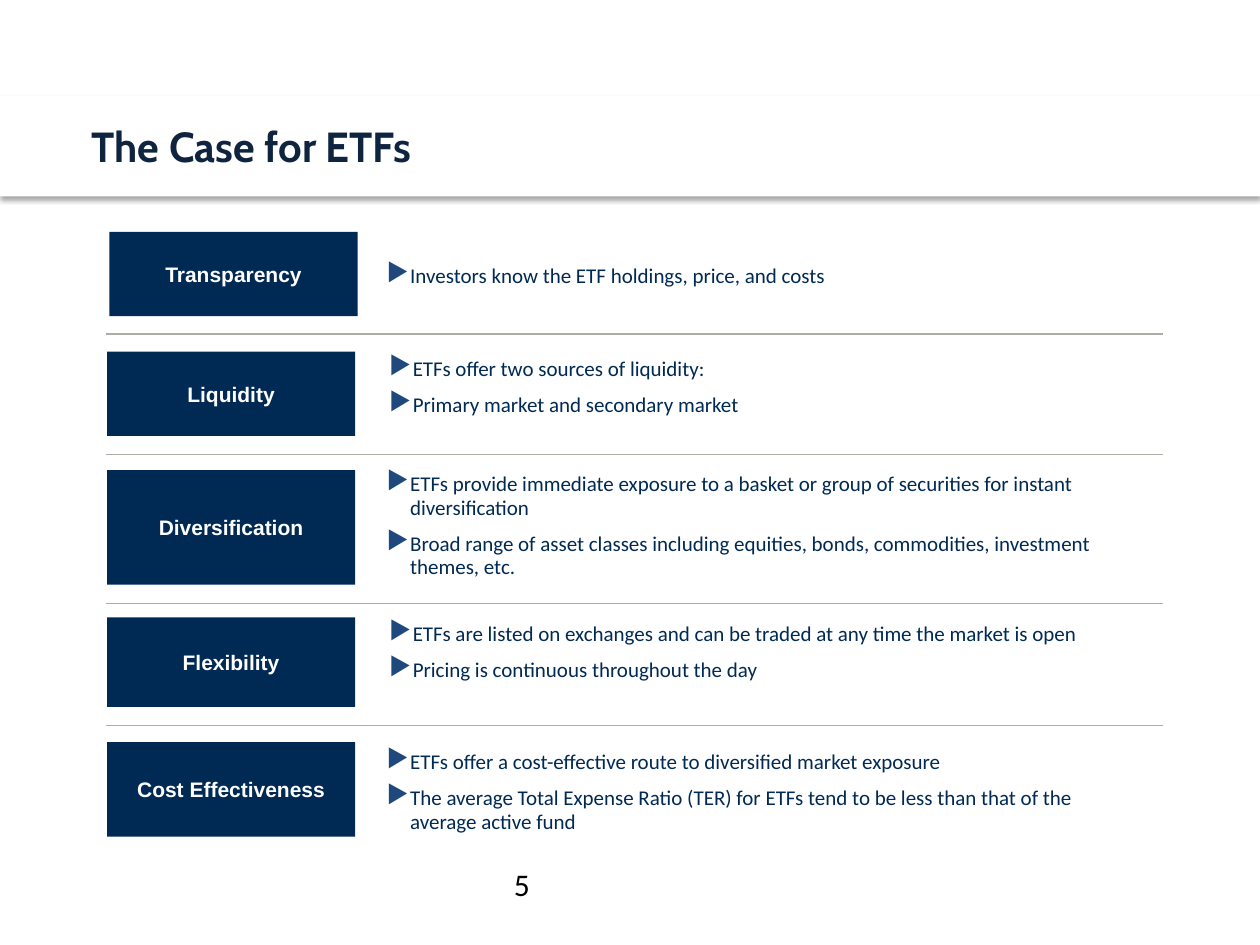
from lxml.etree import SubElement
from pptx import Presentation
from pptx.dml.color import RGBColor
from pptx.enum.shapes import MSO_CONNECTOR, MSO_SHAPE
from pptx.enum.text import MSO_ANCHOR, PP_ALIGN
from pptx.oxml.ns import qn
from pptx.util import Pt

NAVY = "002A54"
ROWS = [
    ("Transparency", 62.6, 132.5, 48.2, 213.8, 147.6, 49.7, 190.8,
     ["Investors know the ETF holdings, price, and costs"]),
    ("Liquidity", 61.2, 200.9, 48.2, 215.3, 200.9, 52.6, 259.9,
     ["ETFs offer two sources of liquidity:",
      "Primary market and secondary market"]),
    ("Diversification", 61.2, 268.6, 65.5, 213.8, 266.4, 99.4, 344.9,
     ["ETFs provide immediate exposure to a basket or group of securities for instant diversification",
      "Broad range of asset classes including equities, bonds, commodities, investment themes, etc."]),
    ("Flexibility", 61.2, 352.8, 51.1, 215.3, 352.1, 52.6, 414.7,
     ["ETFs are listed on exchanges and can be traded at any time the market is open",
      "Pricing is continuous throughout the day"]),
    ("Cost Effectiveness", 61.2, 424.1, 54, 213.8, 425.5, 52.6, None,
     ["ETFs offer a cost-effective route to diversified market exposure",
      "The average Total Expense Ratio (TER) for ETFs tend to be less than that of the average active fund"]),
]


def color(value):
    return RGBColor.from_string(value)


def add_element(parent, tag, **attributes):
    return SubElement(parent, qn(tag), attributes)


class PageBuilder:
    """Draws styled elements on the current slide, with lengths in points."""

    def __init__(self, page):
        self.page = page

    def add_span(self, para, text, font, size, ink, bold=False):
        span = para.add_run()
        span.text = text
        span.font.name = font
        span.font.size = Pt(size)
        span.font.bold = bold
        span.font.color.rgb = color(ink)

    def rectangle(self, left, top, width, height, fill):
        box = self.page.shapes.add_shape(
            MSO_SHAPE.RECTANGLE, Pt(left), Pt(top), Pt(width), Pt(height))
        box.shadow.inherit = False
        box.fill.solid()
        box.fill.fore_color.rgb = color(fill)
        box.line.fill.background()
        return box

    def header_band(self, top, width, height):
        band = self.rectangle(0, top, width, height, "FFFFFF")
        effects = band.element.spPr.find(qn("a:effectLst"))
        shadow = add_element(effects, "a:outerShdw", blurRad=str(Pt(3.1)),
                             dist=str(Pt(1.8)), dir="5400000", algn="t", rotWithShape="0")
        shade = add_element(shadow, "a:srgbClr", val="000000")
        add_element(shade, "a:alpha", val="35000")

    def text_frame(self, left, top, width, height, anchor=MSO_ANCHOR.TOP):
        box = self.page.shapes.add_textbox(Pt(left), Pt(top), Pt(width), Pt(height))
        frame = box.text_frame
        frame.word_wrap = True
        frame.vertical_anchor = anchor
        return frame

    def label(self, text, left, top, height):
        frame = self.rectangle(left, top, 141.8, height, NAVY).text_frame
        frame.word_wrap = True
        frame.vertical_anchor = MSO_ANCHOR.MIDDLE
        para = frame.paragraphs[0]
        para.alignment = PP_ALIGN.CENTER
        self.add_span(para, text, "Arial", 12, "FFFFFF", True)

    def bullets(self, items, left, top, height):
        frame = self.text_frame(left, top, 445.7, height)
        for index, item in enumerate(items):
            para = frame.add_paragraph() if index else frame.paragraphs[0]
            properties = para._p.get_or_add_pPr()
            properties.set("marL", str(Pt(13.5)))
            properties.set("indent", str(-Pt(13.5)))
            tint = add_element(properties, "a:buClr")
            add_element(tint, "a:srgbClr", val="1F497D")
            add_element(properties, "a:buSzPct", val="120000")
            add_element(properties, "a:buChar", char="▶")
            para.line_spacing = 0.94
            para.space_before = Pt(7 if index else 0)
            self.add_span(para, item, "Calibri", 12, NAVY)

    def divider(self, top):
        line = self.page.shapes.add_connector(
            MSO_CONNECTOR.STRAIGHT, Pt(664.6), Pt(top), Pt(60.5), Pt(top))
        line.line.color.rgb = color("ABAEA5")
        line.line.width = Pt(0.75)
        add_element(line._element.spPr, "a:effectLst")


def main():
    deck = Presentation()
    deck.slide_width, deck.slide_height = Pt(720), Pt(540)
    builder = PageBuilder(deck.slides.add_slide(deck.slide_layouts[6]))

    builder.header_band(54.7, 720, 57.6)
    title = builder.text_frame(45.4, 54.7, 629.3, 56.9, MSO_ANCHOR.MIDDLE)
    builder.add_span(title.paragraphs[0], "The Case for ETFs", "Cabin", 24, "0F243E", True)
    number = builder.text_frame(286.6, 491, 149.8, 36)
    builder.add_span(number.paragraphs[0], "5", "Calibri", 18, "000000")

    for (name, label_left, label_top, label_height,
         list_left, list_top, list_height, divider_top, items) in ROWS:
        builder.label(name, label_left, label_top, label_height)
        builder.bullets(items, list_left, list_top, list_height)
        if divider_top is not None:
            builder.divider(divider_top)

    deck.save("out.pptx")


if __name__ == "__main__":
    main()
